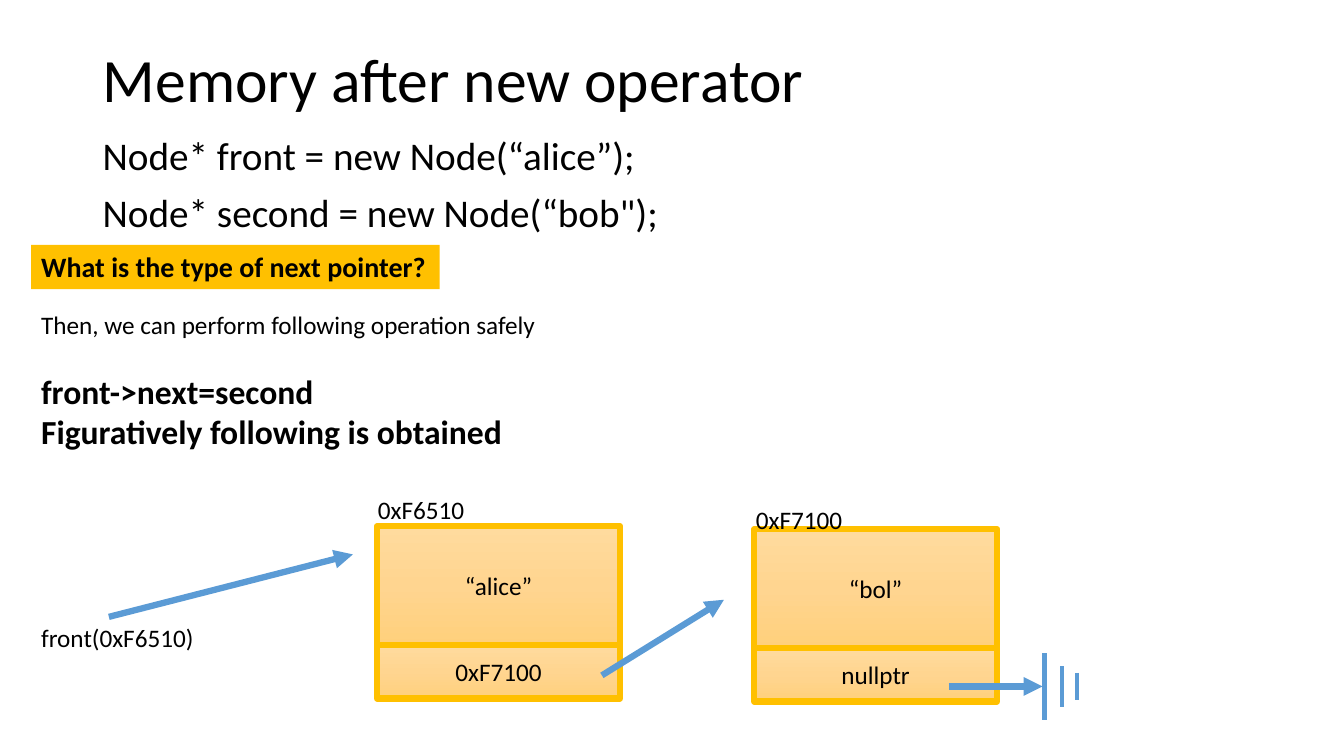
import copy
import dataclasses
import pptx
import pptx.util
import pptx.dml.color
import pptx.enum.shapes
import pptx.enum.text
import pptx.oxml.ns
import pptx.oxml.xmlchemy

Inches = pptx.util.Inches
Pt = pptx.util.Pt
Align = pptx.enum.text.PP_ALIGN
Anchor = pptx.enum.text.MSO_ANCHOR
Shapes = pptx.enum.shapes.MSO_SHAPE


@dataclasses.dataclass(frozen=True)
class Theme:
    font: str = "Calibri"
    ink: str = "000000"
    gold: str = "FFC000"
    blue: str = "5B9BD5"
    gradient: tuple = ((0, "FFDB9E"), (0.5, "FFD590"), (1, "FFD07C"))
    title: int = 44
    code: int = 28
    strong: int = 24
    question: int = 20
    label: int = 18
    thick: float = 4.5
    thin: float = 3


@dataclasses.dataclass(frozen=True)
class Box:
    left: float
    top: float
    width: float
    height: float

    def inches(self):
        return [Inches(length) for length in dataclasses.astuple(self)]


THEME = Theme()


def color(value):
    return pptx.dml.color.RGBColor.from_string(value)


def assign(target, values):
    for name, value in values.items():
        setattr(target, name, value)


def write(frame, lines, size, wrap=True, anchor=Anchor.TOP, bold=False, **spacing):
    assign(frame, {"word_wrap": wrap, "vertical_anchor": anchor,
                   "auto_size": pptx.enum.text.MSO_AUTO_SIZE.NONE})
    for index, line in enumerate(lines):
        para = frame.paragraphs[0] if index == 0 else frame.add_paragraph()
        assign(para, {"alignment": Align.LEFT, **spacing})
        span = para.add_run()
        span.text = line
        assign(span.font, {"name": THEME.font, "size": Pt(size), "bold": bold})
        span.font.color.rgb = color(THEME.ink)


def add_text(page, box, lines, size, **values):
    text = page.shapes.add_textbox(*box.inches())
    write(text.text_frame, lines, size, **values)
    return text


def add_line(page, start, end, width, arrow=False):
    points = [Inches(length) for length in (*start, *end)]
    line = page.shapes.add_connector(pptx.enum.shapes.MSO_CONNECTOR.STRAIGHT, *points)
    line.line.color.rgb = color(THEME.blue)
    line.line.width = Pt(width)
    properties = line._element.spPr
    if arrow:
        tail = pptx.oxml.xmlchemy.OxmlElement("a:tailEnd")
        tail.set("type", "triangle")
        properties.find(pptx.oxml.ns.qn("a:ln")).append(tail)
    properties.append(pptx.oxml.xmlchemy.OxmlElement("a:effectLst"))


def fill_gradient(shape):
    shape.fill.gradient()
    stop_list = next(shape._element.spPr.iter(pptx.oxml.ns.qn("a:gsLst")))
    stop_list.append(copy.deepcopy(stop_list[0]))
    for stop, (position, value) in zip(shape.fill.gradient_stops, THEME.gradient):
        stop.position = position
        stop.color.rgb = color(value)
    shape.fill.gradient_angle = 270


def add_heading(page, box):
    title = page.shapes.title
    assign(title, dict(zip(("left", "top", "width", "height"), box.inches())))
    write(title.text_frame, ["Memory after new operator"], THEME.title,
          anchor=Anchor.MIDDLE, line_spacing=0.9)


def add_code(page, box):
    lines = ["Node* front = new Node(“alice”);", "Node* second = new Node(“bob\");"]
    add_text(page, box, lines, THEME.code, line_spacing=0.9, space_before=Pt(10))


def add_explanation(page, box):
    question = add_text(page, Box(box.left, box.top, 4.05, 0.44),
                        ["What is the type of next pointer?"],
                        THEME.question, wrap=False, bold=True)
    question.fill.solid()
    question.fill.fore_color.rgb = color(THEME.gold)
    steps = add_text(page, Box(box.left, box.top + 0.59, box.width, box.height - 0.59),
                     ["Then, we can perform following operation safely",
                      "front->next=second", "Figuratively following is obtained"],
                     THEME.label, wrap=False)
    operations = steps.text_frame.paragraphs[1:]
    operations[0].space_before = Pt(22)
    for para in operations:
        assign(para.runs[0].font, {"size": Pt(THEME.strong), "bold": True})


def add_node(page, box, address, address_offset, name, following):
    name_height = box.height * 0.69
    cells = ((name, box.top, name_height),
             (following, box.top + name_height, box.height - name_height))
    for text, top, height in cells:
        cell = page.shapes.add_shape(
            Shapes.RECTANGLE, *Box(box.left, top, box.width, height).inches())
        cell.shadow.inherit = False
        fill_gradient(cell)
        cell.line.color.rgb = color(THEME.gold)
        cell.line.width = Pt(THEME.thick)
        write(cell.text_frame, [text], THEME.label,
              anchor=Anchor.MIDDLE, alignment=Align.CENTER)
    shift, rise = address_offset
    add_text(page, Box(box.left - shift, box.top - rise, 1.07, 0.4),
             [address], THEME.label, wrap=False)


def add_ground(page, box):
    middle = box.top + box.height / 2
    for share, length in ((0, 0.66), (0.53, 0.4), (1, 0.27)):
        x = box.left + share * box.width
        add_line(page, (x, middle - length / 2), (x, middle + length / 2), THEME.thin)


def add_diagram(page, box):
    left, top = box.left, box.top
    add_text(page, Box(left, top + 1.26, 1.92, 0.4), ["front(0xF6510)"], THEME.label)
    add_node(page, Box(left + 3.43, top + 0.36, 2.41, 1.71),
             "0xF6510", (0.09, 0.36), "“alice”", "0xF7100")
    add_node(page, Box(left + 7.17, top + 0.39, 2.41, 1.71),
             "0xF7100", (0.08, 0.3), "“bol”", "nullptr")
    arrows = (((5.66, 1.84), (6.87, 1.09)),
              ((0.77, 1.26), (3.19, 0.64)),
              ((9.1, 1.95), (10.03, 1.95)))
    for start, end in arrows:
        add_line(page, (left + start[0], top + start[1]),
                 (left + end[0], top + end[1]), THEME.thick, arrow=True)
    add_ground(page, Box(left + 10.05, top + 1.62, 0.32, 0.66))


def main():
    deck = pptx.Presentation()
    assign(deck, {"slide_width": Inches(13.33), "slide_height": Inches(7.5)})
    page = deck.slides.add_slide(deck.slide_layouts.get_by_name("Title Only"))
    add_heading(page, Box(0.92, 0.4, 11.5, 0.83))
    add_code(page, Box(0.92, 1.31, 11.5, 2.59))
    add_explanation(page, Box(0.31, 2.43, 5.17, 2.1))
    add_diagram(page, Box(0.31, 4.86, 10.37, 2.28))
    deck.save("out.pptx")


if __name__ == "__main__":
    main()
